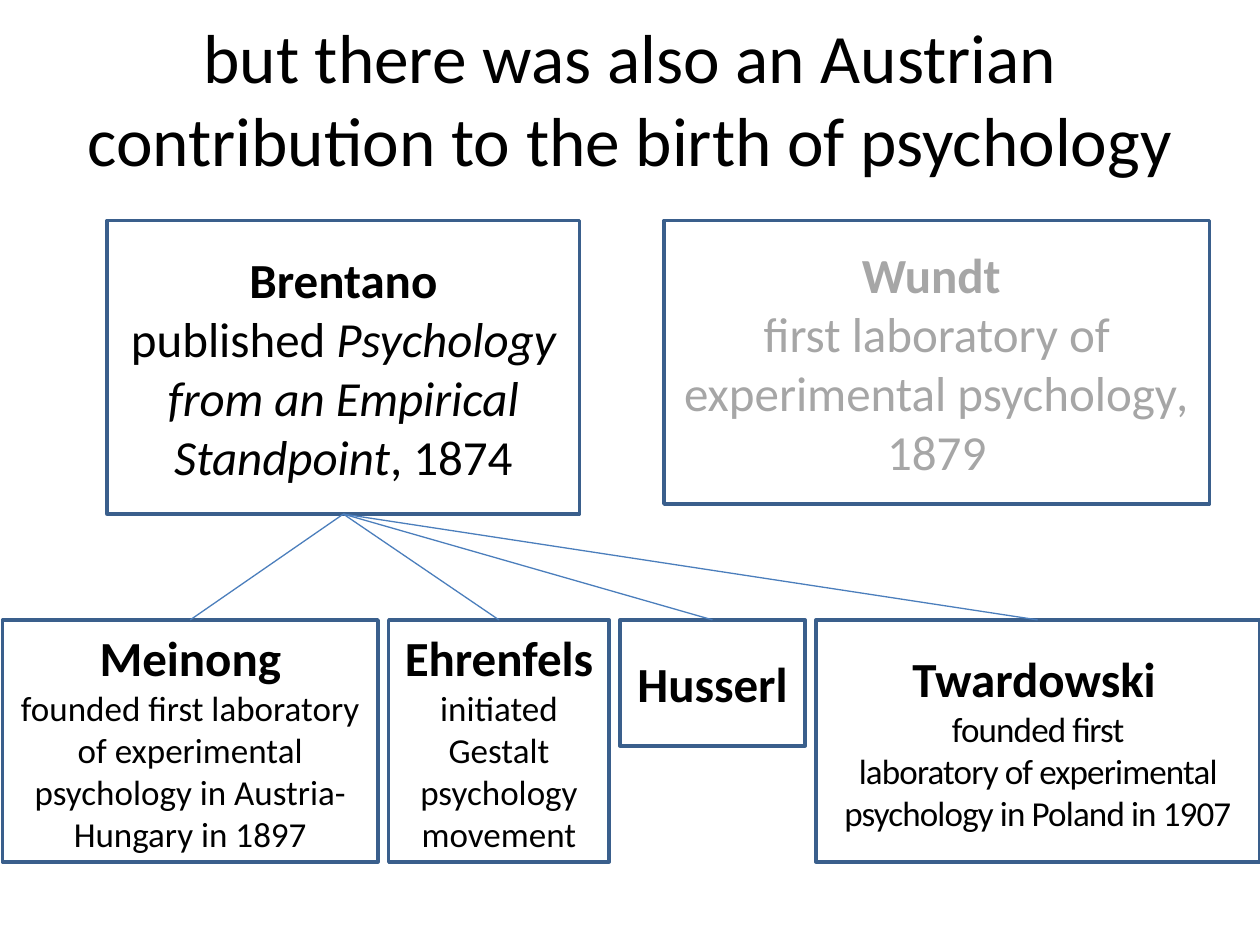
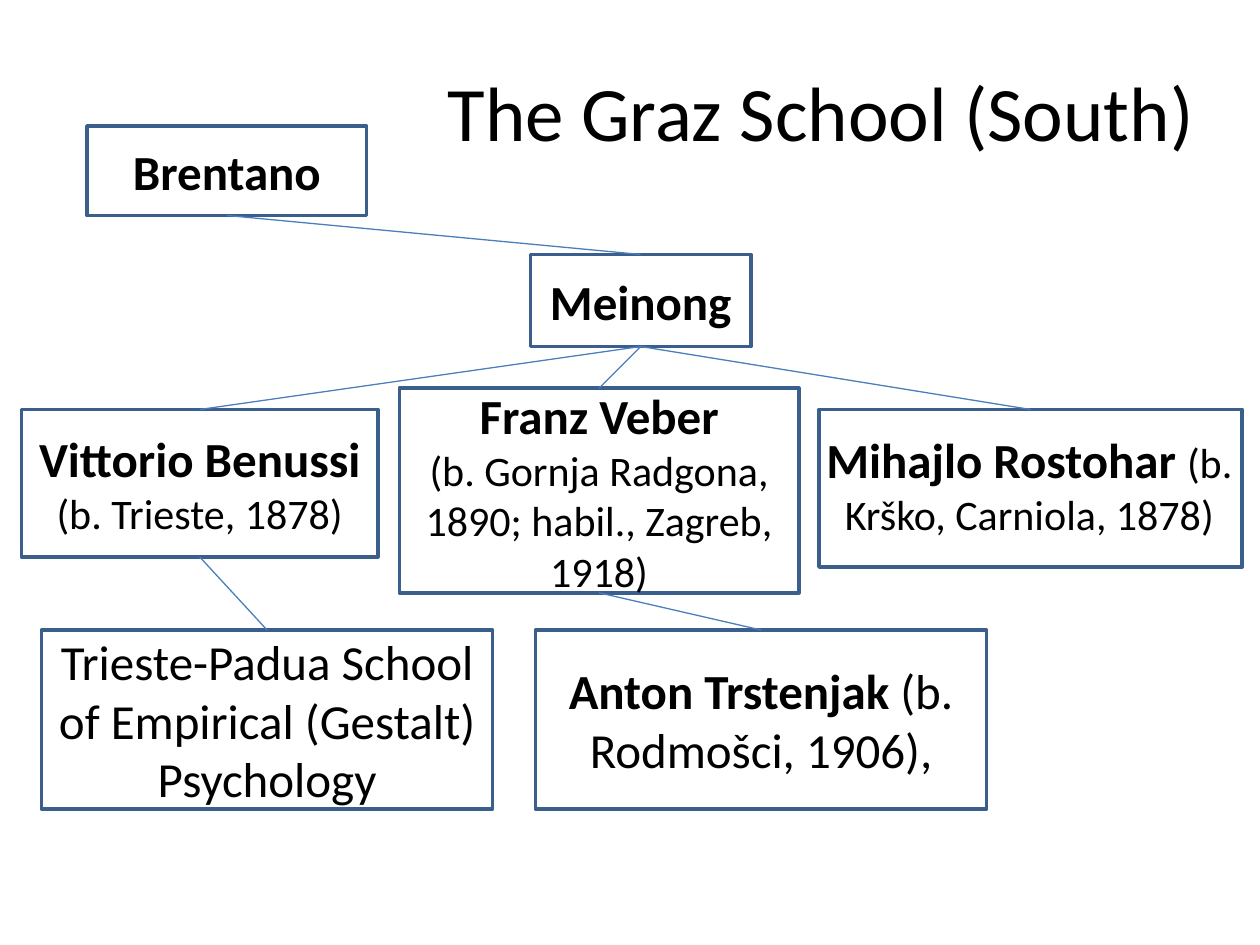
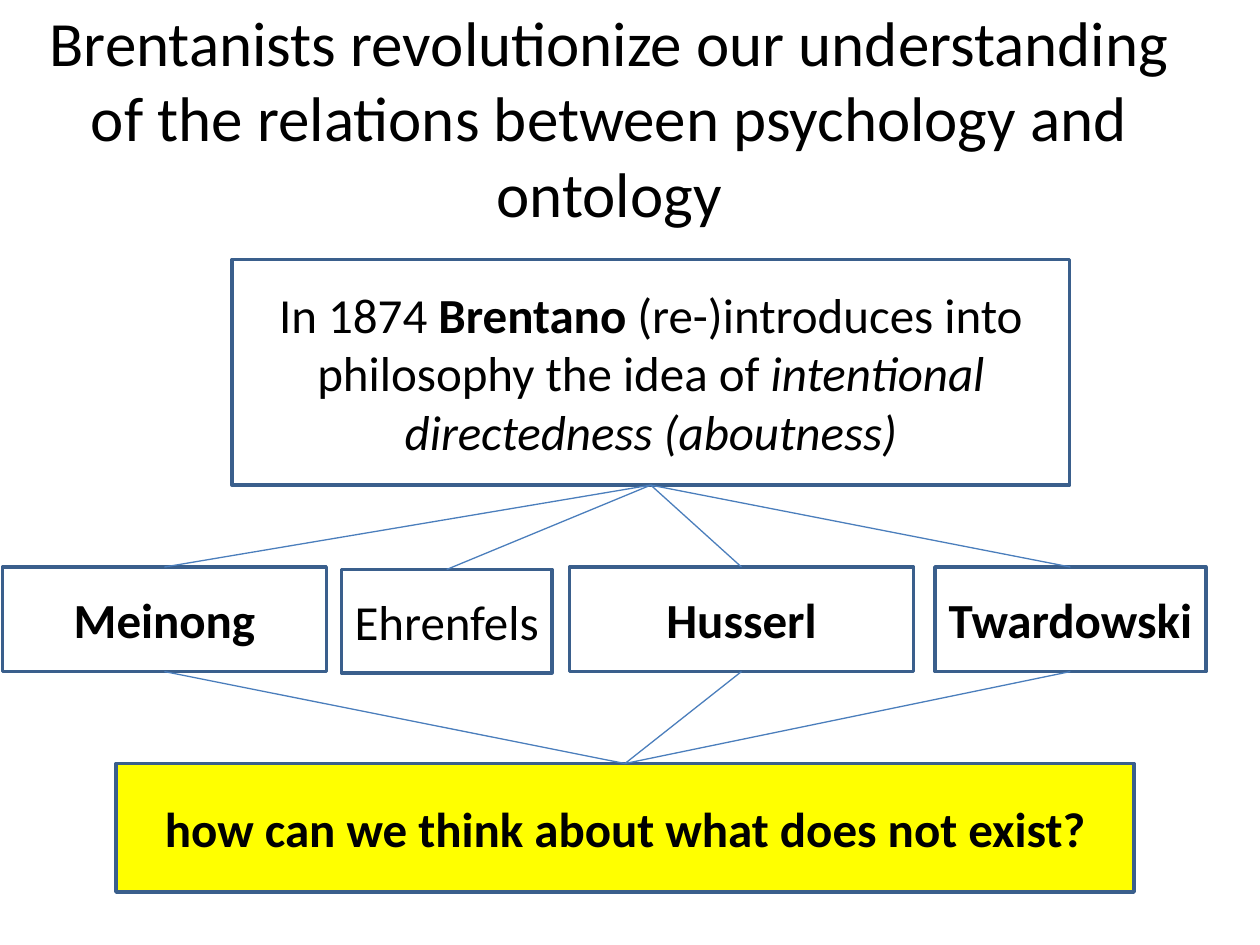
from dataclasses import dataclass
from itertools import accumulate

from lxml import etree
from pptx import Presentation
from pptx.dml.color import RGBColor
from pptx.enum.shapes import MSO_CONNECTOR, MSO_SHAPE
from pptx.enum.text import MSO_ANCHOR, PP_ALIGN
from pptx.oxml.ns import qn
from pptx.util import Inches, Pt

BLACK = RGBColor(0x00, 0x00, 0x00)
GREY = RGBColor(0xA6, 0xA6, 0xA6)
YELLOW = RGBColor(0xFF, 0xFF, 0x00)
BORDER = RGBColor(0x3A, 0x5F, 0x8C)
LINK = RGBColor(0x4B, 0x7E, 0xBC)

RECTANGLE = MSO_SHAPE.RECTANGLE
STRAIGHT = MSO_CONNECTOR.STRAIGHT
TOP, MIDDLE = MSO_ANCHOR.TOP, MSO_ANCHOR.MIDDLE
CENTER, RIGHT = PP_ALIGN.CENTER, PP_ALIGN.RIGHT
TOP_SIDE, BOTTOM_SIDE = 0, 2

FONT = "Calibri"
COLUMNS, ROWS = 100, 75
WIDTH, HEIGHT = Inches(10), Inches(7.5)
NBSP = chr(160)


@dataclass(frozen=True)
class Run:
    text: str
    size: float = 28
    bold: bool = False
    italic: bool = False
    spacing: float = 0


@dataclass(frozen=True)
class Area:
    """A place on the slide, in grid columns and rows."""
    left: float
    top: float
    width: float
    height: float

    def lengths(self) -> tuple[int, ...]:
        col, row = WIDTH / COLUMNS, HEIGHT / ROWS
        return (round(self.left * col), round(self.top * row),
                round(self.width * col), round(self.height * row))


Paragraphs = list[list[Run]]


@dataclass(frozen=True)
class Box:
    area: Area
    paragraphs: Paragraphs
    color: RGBColor = BLACK
    fill: RGBColor | None = None


@dataclass(frozen=True)
class Label:
    area: Area
    paragraphs: Paragraphs
    align: PP_ALIGN = CENTER
    anchor: MSO_ANCHOR = MIDDLE


@dataclass(frozen=True)
class Chart:
    """A family tree: titled boxes and the links from teacher to pupil."""
    labels: list[Label]
    boxes: dict[str, Box]
    links: list[tuple[str, str]]


def name(text: str) -> Run:
    return Run(text, bold=True)


def write(tf, paragraphs: Paragraphs, color: RGBColor, align: PP_ALIGN, anchor: MSO_ANCHOR) -> None:
    tf.word_wrap = True
    tf.vertical_anchor = anchor
    for i, runs in enumerate(paragraphs):
        p = tf.add_paragraph() if i else tf.paragraphs[0]
        p.alignment = align
        p.font.name = FONT
        p.font.color.rgb = color
        fonts = []
        for run in runs:
            r = p.add_run()
            r.text = run.text
            fonts.append(r.font)
            if run.spacing:
                r.font._element.set("spc", str(round(run.spacing * 100)))
        for key in ("size", "bold", "italic"):
            values = [getattr(run, key) for run in runs]
            if key == "size":
                values = [Pt(value) for value in values]
            if len(set(values)) == 1:
                setattr(p.font, key, values[0])
            else:
                for font, value in zip(fonts, values):
                    setattr(font, key, value)


def add_box(s, box: Box):
    sp = s.shapes.add_shape(RECTANGLE, *box.area.lengths())
    sp.shadow.inherit = False
    if box.fill is None:
        sp.fill.background()
    else:
        sp.fill.solid()
        sp.fill.fore_color.rgb = box.fill
    sp.line.color.rgb = BORDER
    sp.line.width = Pt(2)
    if box.paragraphs:
        write(sp.text_frame, box.paragraphs, box.color, CENTER, MIDDLE)
    return sp


def add_label(s, label: Label) -> None:
    tf = s.shapes.add_textbox(*label.area.lengths()).text_frame
    write(tf, label.paragraphs, BLACK, label.align, label.anchor)


def add_link(s, teacher, pupil) -> None:
    line = s.shapes.add_connector(STRAIGHT, 0, 0, 0, 0)
    line.begin_connect(teacher, BOTTOM_SIDE)
    line.end_connect(pupil, TOP_SIDE)
    line.line.color.rgb = LINK
    line.line.width = Pt(0.75)
    etree.SubElement(line._element.spPr, qn("a:effectLst"))


def draw(prs, chart: Chart) -> None:
    s = prs.slides.add_slide(prs.slide_layouts[6])
    shapes = {key: add_box(s, box) for key, box in chart.boxes.items()}
    for label in chart.labels:
        add_label(s, label)
    for teacher, pupil in chart.links:
        add_link(s, shapes[teacher], shapes[pupil])


def austrian_contribution() -> Chart:
    widths, gap = [29.8, 17.5, 14.7, 35.2], 0.85
    lefts = accumulate([width + gap for width in widths[:-1]], initial=0.2)
    heights = [19.2, 19.2, 10, 19.2]
    areas = [Area(left, 49.2, width, height)
             for left, width, height in zip(lefts, widths, heights)]
    pupils = {
        "Meinong": [
            [name("Meinong")],
            [Run("founded first laboratory of experimental psychology in Austria-Hungary in 1897", 20)]],
        "Ehrenfels": [
            [name("Ehrenfels "), Run("initiated Gestalt psychology", 20)],
            [Run("movement", 20)]],
        "Husserl": [[name("Husserl")]],
        "Twardowski": [
            [name("Twardowski"), Run(NBSP, 18)],
            [Run(f"founded first laboratory{NBSP}of{NBSP}experimental "
                 f"psychology{NBSP}in{NBSP}Poland in 1907", 20, spacing=-0.5)]],
    }
    boxes = {
        "Brentano": Box(Area(8.5, 17.5, 37.5, 23.3), [
            [name("Brentano")],
            [Run("published "),
             Run("Psychology from an Empirical Standpoint", italic=True),
             Run(", 1874")]]),
        "Wundt": Box(Area(52.7, 17.5, 43.3, 22.5), [
            [name("Wundt ")],
            [Run("first laboratory of experimental psychology"),
             Run(",", italic=True), Run(" 1879")]], GREY),
    }
    boxes |= {key: Box(area, text) for area, (key, text) in zip(areas, pupils.items())}
    title = Label(Area(5, 3, 90, 9.5), [
        [Run("but there was also an Austrian contribution to the birth of psychology", 39.6)]])
    return Chart([title], boxes, [("Brentano", pupil) for pupil in pupils])


def graz_school() -> Chart:
    boxes = {
        "Brentano": Box(Area(6.9, 10, 22.2, 7.1), [[name("Brentano")]]),
        "Meinong": Box(Area(42.1, 20.2, 17.5, 7.3), [[name("Meinong")]]),
        "Benussi": Box(Area(1.7, 32.5, 28.3, 11.7), [
            [name("Vittorio Benussi")], [Run("(b. Trieste, 1878)", 24)]]),
        "Veber": Box(Area(31.7, 30.8, 31.7, 16.25), [
            [name("Franz Veber")],
            [Run("(b. Gornja Radgona, 1890; habil., Zagreb, 1918)", 24)]]),
        "Rostohar": Box(Area(65, 32.5, 33.6, 12.5), []),
        "Trieste-Padua": Box(Area(3.3, 50, 35.8, 14.2), [
            [Run("Trieste-Padua School of Empirical (Gestalt) Psychology")]]),
        "Trstenjak": Box(Area(42.5, 50, 35.8, 14.2), [
            [name("Anton Trstenjak "), Run("(b. Rodmošci, 1906),")]]),
    }
    labels = [
        Label(Area(5.8, 2.5, 90, 12.5), [[Run("The Graz School (South)", 44)]], RIGHT),
        Label(Area(64.2, 33.6, 35, 9.8), [
            [name("Mihajlo Rostohar "), Run("(b. Krško, Carniola, 1878)", 24)]], anchor=TOP),
    ]
    links = [("Brentano", "Meinong"), ("Benussi", "Trieste-Padua"), ("Veber", "Trstenjak")]
    links += [("Meinong", pupil) for pupil in ("Benussi", "Veber", "Rostohar")]
    return Chart(labels, boxes, links)


def psychology_and_ontology() -> Chart:
    pupils = {
        "Meinong": Box(Area(0.2, 45, 25.7, 8.3), [[name("Meinong")]]),
        "Ehrenfels": Box(Area(27.1, 45.2, 16.7, 8.2), [[Run("Ehrenfels")]]),
        "Husserl": Box(Area(45.2, 45, 27.3, 8.3), [[name("Husserl")]]),
        "Twardowski": Box(Area(74.2, 45, 21.5, 8.3), [[name("Twardowski")]]),
    }
    boxes = {
        "Brentano": Box(Area(18.4, 20.6, 66.5, 17.9), [
            [Run("In 1874 "), name("Brentano "),
             Run("(re-)introduces into philosophy the idea of "),
             Run("intentional directedness (aboutness)", italic=True)]]),
        **pupils,
        "Question": Box(Area(9.2, 60.6, 80.8, 10.2), [
            [name("how can we think about what does not exist?")]], fill=YELLOW),
    }
    title = Label(Area(1.7, 3, 93.3, 12.5), [
        [Run("Brentanists revolutionize our understanding of the relations "
             "between psychology and ontology", 36)]])
    links = [("Brentano", pupil) for pupil in pupils]
    links += [(pupil, "Question") for pupil in pupils if pupil != "Ehrenfels"]
    return Chart([title], boxes, links)


def main() -> None:
    prs = Presentation()
    prs.slide_width, prs.slide_height = WIDTH, HEIGHT
    for chart in (austrian_contribution(), graz_school(), psychology_and_ontology()):
        draw(prs, chart)
    prs.save("out.pptx")


if __name__ == "__main__":
    main()
